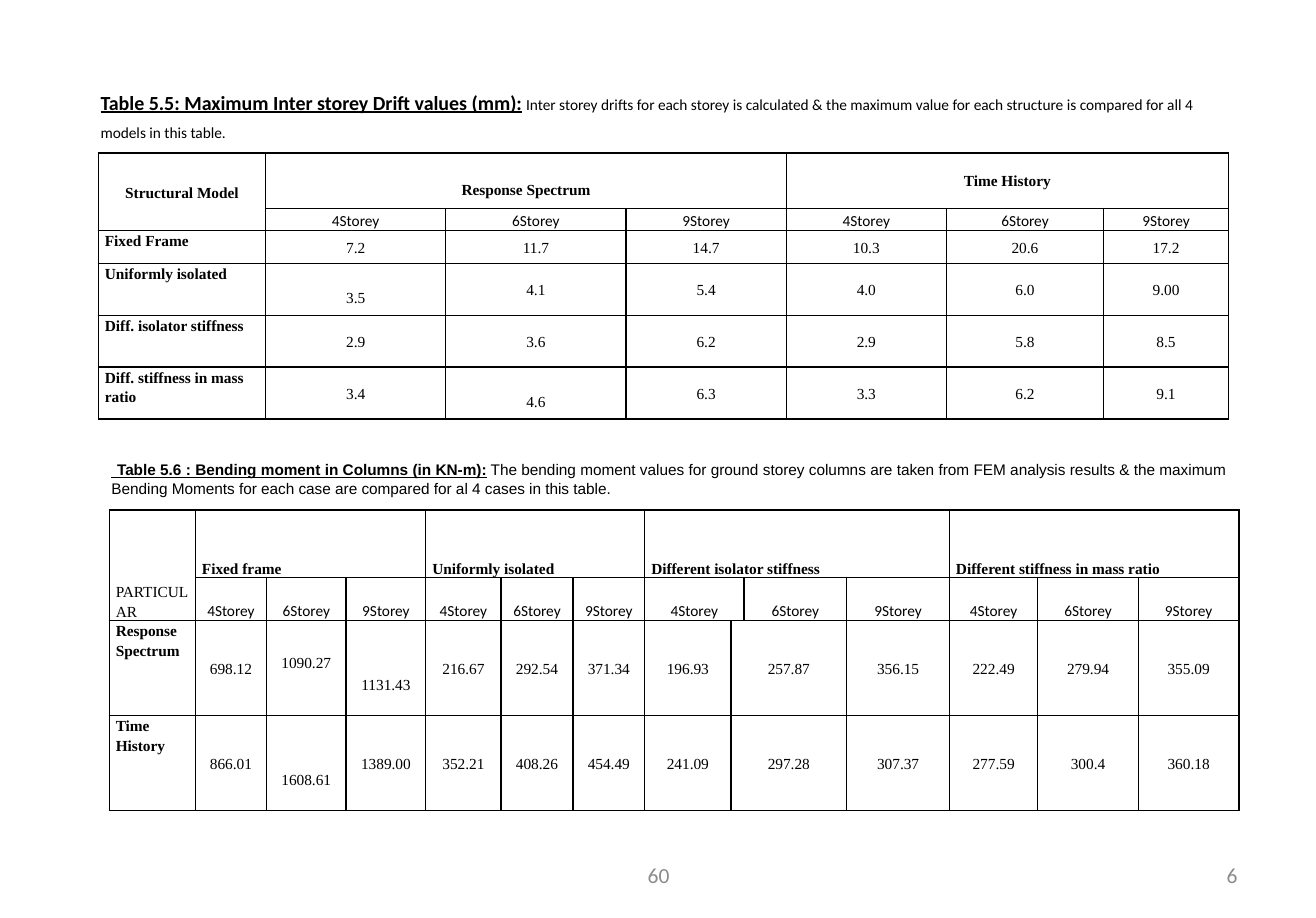
"""Builds the slide comparing storey drift and column bending moments."""
from lxml.etree import SubElement
from pptx import Presentation
from pptx.dml.color import RGBColor
from pptx.enum.text import MSO_ANCHOR as Anchor, MSO_AUTO_SIZE as AutoSize, PP_ALIGN as Align
from pptx.oxml.ns import qn
from pptx.util import Cm, Pt

COLOURS = {"ink": "000000", "page": "8C8C8C"}
SERIF, SANS, CAPTION = "Times New Roman", "Calibri", "Arial"
LINE_DROP = 0.37


def write(frame, text, size=10, font=SERIF, colour="ink", bold=False,
          underline=False, align=Align.LEFT, spacing=1.0):
    """Append formatted text to the first paragraph of a frame."""
    paragraph = frame.paragraphs[0]
    paragraph.alignment = align
    paragraph.line_spacing = spacing
    run = paragraph.add_run()
    run.text = text
    run.font.size = Pt(size)
    run.font.name = font
    run.font.bold = bold
    run.font.underline = underline
    run.font.color.rgb = RGBColor.from_string(COLOURS[colour])


def place(shape, left, top, width, height, anchor=Anchor.MIDDLE):
    """Position a text shape and return its prepared frame."""
    shape.left, shape.top = Cm(left), Cm(top)
    shape.width, shape.height = Cm(width), Cm(height)
    frame = shape.text_frame
    frame.word_wrap = True
    frame.auto_size = AutoSize.NONE
    frame.vertical_anchor = anchor
    frame.margin_left = frame.margin_right = Cm(0.3)
    frame.margin_top = frame.margin_bottom = Cm(0.15)
    return frame


prs = Presentation()
prs.slide_width, prs.slide_height = Cm(30.23), Cm(21.08)
slide = prs.slides.add_slide(prs.slide_layouts[5])
shapes = slide.shapes

drift_caption = place(shapes.title, 2.01, 1.65, 26.7, 1.78, Anchor.TOP)
write(drift_caption, "Table 5.5: Maximum Inter storey Drift values (mm):",
      size=13, font=SANS, bold=True, underline=True, spacing=1.5)
write(drift_caption, " ", size=13, font=SANS, spacing=1.5)
write(drift_caption, "Inter storey drifts for each storey is calculated & the maximum value "
      "for each structure is compared for all 4 models in this table.",
      font=SANS, spacing=1.5)

moment_caption = place(shapes.add_textbox(0, 0, 0, 0), 2.26, 10.31, 26.19, 1.27)
write(moment_caption, " ", size=13, font=CAPTION, underline=True, align=Align.JUSTIFY)
write(moment_caption, "Table 5.6 : Bending moment in Columns (in KN-m):",
      font=CAPTION, bold=True, underline=True, align=Align.JUSTIFY)
write(moment_caption, " The bending moment values for ground storey columns are taken from "
      "FEM analysis results & the maximum Bending Moments for each case are compared "
      "for al 4 cases in this table.", font=CAPTION, align=Align.JUSTIFY)

storeys = ["4Storey", "6Storey", "9Storey"]
drift = {
    "at": (2.26, 3.51),
    "widths": [3.84, 4.14, 4.14, 3.68, 3.68, 3.61, 2.87],
    "heights": [1.27, 0.51, 0.76, 1.19, 1.19, 1.19],
    "header": (Align.CENTER, Anchor.MIDDLE),
    "corner_bold": True,
    "merges": [(0, 0, 1, 0), (0, 1, 0, 3), (0, 4, 0, 6)],
    "drops": {(0, 1): 1, (3, 1): 1, (5, 2): 1},
    "rows": [
        ["Structural Model", "Response Spectrum", None, None, "Time History", None, None],
        [None, *storeys, *storeys],
        ["Fixed Frame", "7.2", "11.7", "14.7", "10.3", "20.6", "17.2"],
        ["Uniformly isolated", "3.5", "4.1", "5.4", "4.0", "6.0", "9.00"],
        ["Diff. isolator stiffness", "2.9", "3.6", "6.2", "2.9", "5.8", "8.5"],
        ["Diff. stiffness in mass ratio", "3.4", "4.6", "6.3", "3.3", "6.2", "9.1"],
    ],
}
moment = {
    "at": (2.51, 11.71),
    "widths": [1.98, 1.63, 1.83, 1.83, 1.73, 1.65, 1.65,
               1.98, 0.3, 2.36, 2.36, 2.03, 2.31, 2.31],
    "heights": [1.55, 0.99, 2.18, 2.18],
    "header": (Align.LEFT, Anchor.BOTTOM),
    "corner_bold": False,
    "merges": [(0, 0, 1, 0), (0, 1, 0, 3), (0, 4, 0, 6), (0, 7, 0, 10), (0, 11, 0, 13),
               (1, 7, 1, 8), (2, 8, 2, 9), (3, 8, 3, 9)],
    "drops": {(2, 2): 2, (2, 3): 2, (3, 2): 2},
    "rows": [
        ["PARTICULAR", "Fixed frame", None, None, "Uniformly isolated", None, None,
         "Different isolator stiffness", None, None, None,
         "Different stiffness in mass ratio", None, None],
        [None, *storeys, *storeys, "4Storey", None, "6Storey", "9Storey", *storeys],
        ["Response Spectrum", "698.12", "1090.27", "1131.43", "216.67", "292.54", "371.34",
         "196.93", "257.87", None, "356.15", "222.49", "279.94", "355.09"],
        ["Time History", "866.01", "1608.61", "1389.00", "352.21", "408.26", "454.49",
         "241.09", "297.28", None, "307.37", "277.59", "300.4", "360.18"],
    ],
}

for results in (drift, moment):
    widths, heights = results["widths"], results["heights"]
    left, top = results["at"]
    grid = shapes.add_table(len(heights), len(widths), Cm(left), Cm(top),
                            Cm(sum(widths)), Cm(sum(heights))).table
    grid.first_row = grid.horz_banding = False
    for column, width in zip(grid.columns, widths):
        column.width = Cm(width)
    for row, height in zip(grid.rows, heights):
        row.height = Cm(height)
    for row1, col1, row2, col2 in results["merges"]:
        grid.cell(row1, col1).merge(grid.cell(row2, col2))

    for r, values in enumerate(results["rows"]):
        for c, value in enumerate(values):
            cell = grid.cell(r, c)
            cell.margin_left = cell.margin_right = Cm(0.15)
            cell.margin_top = Cm(LINE_DROP * results["drops"].get((r, c), 0))
            cell.margin_bottom = 0
            properties = cell._tc.get_or_add_tcPr()
            for side in ("a:lnL", "a:lnR", "a:lnT", "a:lnB"):
                border = SubElement(properties, qn(side), w=str(Pt(1)))
                fill = SubElement(border, qn("a:solidFill"))
                SubElement(fill, qn("a:srgbClr"), val=COLOURS["ink"])
            cell.fill.background()
            if value is None:
                continue
            font, bold = SERIF, False
            if r == 0:
                align, anchor = results["header"]
                bold = c > 0 or results["corner_bold"]
            elif r == 1:
                align, anchor, font = Align.CENTER, Anchor.BOTTOM, SANS
            elif c == 0:
                align, anchor, bold = Align.LEFT, Anchor.TOP, True
            else:
                align, anchor = Align.CENTER, Anchor.MIDDLE
                if (r, c) == (2, 2) and results is moment:
                    anchor = Anchor.TOP
            cell.vertical_anchor = anchor
            write(cell.text_frame, value, font=font, bold=bold, align=align, spacing=1.15)

for number, left, width, align in [("6", 21.67, 7.06, Align.RIGHT),
                                   ("60", 10.34, 9.58, Align.CENTER)]:
    page = place(shapes.add_textbox(0, 0, 0, 0), left, 19.53, width, 1.12)
    write(page, number, size=14, font=SANS, colour="page", align=align)

prs.save("out.pptx")
